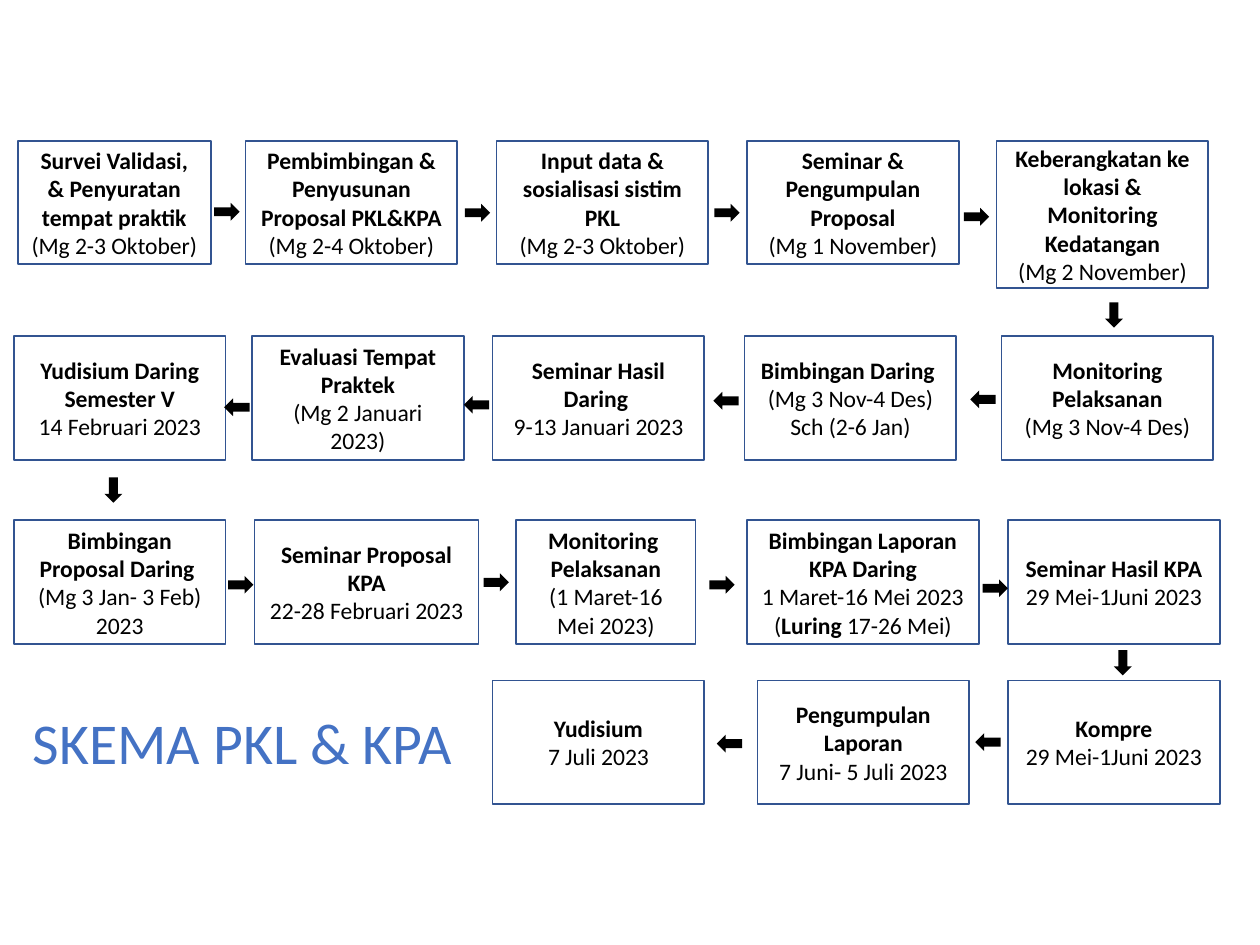
from dataclasses import dataclass
from enum import IntEnum

from pptx import Presentation
from pptx.dml.color import RGBColor
from pptx.enum.shapes import MSO_SHAPE
from pptx.enum.text import MSO_ANCHOR, MSO_AUTO_SIZE, PP_ALIGN
from pptx.shapes.autoshape import Shape
from pptx.shapes.shapetree import SlideShapes
from pptx.text.text import TextFrame
from pptx.util import Cm, Pt

BLACK = RGBColor(0x00, 0x00, 0x00)
BORDER_BLUE = RGBColor(0x32, 0x54, 0x91)
TITLE_BLUE = RGBColor(0x44, 0x72, 0xC4)

STEP_WIDTH, STEP_HEIGHT = 4.27, 2.49
ARROW_LENGTH, ARROW_THICKNESS = 0.51, 0.36
ROW_TOPS = (2.84, 6.78, 10.49, 13.72)


class Direction(IntEnum):
    RIGHT = 0
    DOWN = 90
    LEFT = 180


@dataclass(frozen=True)
class Step:
    left: float
    paragraphs: tuple[str, ...]
    width: float = STEP_WIDTH
    height: float = STEP_HEIGHT


@dataclass(frozen=True)
class Arrow:
    left: float
    top: float
    direction: Direction


STEP_ROWS = (
    (
        Step(0.36, ("*Survei Validasi, & Penyuratan tempat praktik*", "(Mg 2-3 Oktober)"), width=3.89),
        Step(4.95, ("*Pembimbingan & Penyusunan Proposal PKL&KPA*", "(Mg 2-4 Oktober)")),
        Step(10.01, ("*Input data & sosialisasi sistim PKL*", "(Mg 2-3 Oktober)")),
        Step(15.06, ("*Seminar & Pengumpulan Proposal*", "(Mg 1 November)")),
        Step(20.09, ("*Keberangkatan ke lokasi & Monitoring Kedatangan*", "(Mg 2 November)"), height=2.97),
    ),
    (
        Step(20.19, ("*Monitoring Pelaksanan*", "(Mg 3 Nov-4 Des)")),
        Step(15.01, ("*Bimbingan Daring *", "(Mg 3 Nov-4 Des)", "Sch (2-6 Jan)")),
        Step(9.93, ("*Seminar Hasil Daring *", "9-13 Januari 2023")),
        Step(5.08, ("*Evaluasi Tempat Praktek*", "(Mg 2 Januari 2023)")),
        Step(0.28, ("*Yudisium Daring Semester V*", "14 Februari 2023")),
    ),
    (
        Step(0.28, ("*Bimbingan Proposal Daring *", "(Mg 3 Jan- 3 Feb)", "2023")),
        Step(5.13, ("*Seminar Proposal KPA*", "22-28 Februari 2023"), width=4.52),
        Step(10.41, ("*Monitoring *", "*Pelaksanan*", "(1 Maret-16 Mei 2023)"), width=3.61),
        Step(15.06, ("*Bimbingan Laporan KPA Daring*", "1 Maret-16 Mei 2023", "(*Luring* 17-26 Mei)"), width=4.67),
        Step(20.32, ("*Seminar Hasil KPA *29 Mei-1Juni 2023",)),
    ),
    (
        Step(20.32, ("*Kompre*", "29 Mei-1Juni 2023")),
        Step(15.27, ("*Pengumpulan Laporan*", "7 Juni- 5 Juli 2023")),
        Step(9.93, ("*Yudisium*", "7 Juli 2023")),
    ),
)

ARROWS = (
    Arrow(4.32, 4.09, Direction.RIGHT),
    Arrow(9.37, 4.11, Direction.RIGHT),
    Arrow(14.4, 4.11, Direction.RIGHT),
    Arrow(19.43, 4.19, Direction.RIGHT),
    Arrow(22.2, 6.17, Direction.DOWN),
    Arrow(19.56, 7.87, Direction.LEFT),
    Arrow(14.38, 7.9, Direction.LEFT),
    Arrow(9.35, 7.98, Direction.LEFT),
    Arrow(4.52, 8.03, Direction.LEFT),
    Arrow(2.03, 9.7, Direction.DOWN),
    Arrow(4.6, 11.61, Direction.RIGHT),
    Arrow(9.75, 11.56, Direction.RIGHT),
    Arrow(14.3, 11.61, Direction.RIGHT),
    Arrow(19.81, 11.68, Direction.RIGHT),
    Arrow(22.38, 13.18, Direction.DOWN),
    Arrow(19.66, 14.78, Direction.LEFT),
    Arrow(14.45, 14.81, Direction.LEFT),
)


def write_text(frame: TextFrame, paragraphs: tuple[str, ...], *, size: float,
               color: RGBColor, wrap: bool = True) -> None:
    frame.word_wrap = wrap
    frame.vertical_anchor = MSO_ANCHOR.MIDDLE
    for index, marked_text in enumerate(paragraphs):
        paragraph = frame.add_paragraph() if index else frame.paragraphs[0]
        paragraph.alignment = PP_ALIGN.CENTER
        for position, piece in enumerate(marked_text.split("*")):
            if piece:
                run = paragraph.add_run()
                run.text = piece
                run.font.name = "Calibri"
                run.font.size = Pt(size)
                run.font.bold = position % 2 == 1
                run.font.color.rgb = color


def draw_step(shapes: SlideShapes, step: Step, top: float) -> None:
    box = shapes.add_shape(MSO_SHAPE.RECTANGLE, Cm(step.left), Cm(top),
                           Cm(step.width), Cm(step.height))
    box.shadow.inherit = False
    box.fill.background()
    box.line.color.rgb = BORDER_BLUE
    box.line.width = Pt(1)
    write_text(box.text_frame, step.paragraphs, size=13.5, color=BLACK)


def draw_arrow(shapes: SlideShapes, arrow: Arrow) -> None:
    pointer = shapes.add_shape(MSO_SHAPE.RIGHT_ARROW, Cm(arrow.left), Cm(arrow.top),
                               Cm(ARROW_LENGTH), Cm(ARROW_THICKNESS))
    pointer.rotation = arrow.direction
    pointer.shadow.inherit = False
    pointer.fill.solid()
    pointer.fill.fore_color.rgb = BLACK
    pointer.line.fill.background()


def place_title(title: Shape) -> None:
    title.left, title.top, title.width, title.height = Cm(0.43), Cm(14.15), Cm(8.92), Cm(1.6)
    frame = title.text_frame
    frame.margin_left = frame.margin_right = Cm(0.18)
    frame.margin_top = frame.margin_bottom = Cm(0.1)
    frame.auto_size = MSO_AUTO_SIZE.SHAPE_TO_FIT_TEXT
    write_text(frame, ("SKEMA PKL & KPA",), size=33, color=TITLE_BLUE, wrap=False)


def main() -> None:
    presentation = Presentation()
    presentation.slide_width, presentation.slide_height = Cm(25.4), Cm(19.05)
    slide = presentation.slides.add_slide(presentation.slide_layouts[5])
    place_title(slide.shapes.title)
    for top, steps in zip(ROW_TOPS, STEP_ROWS):
        for step in steps:
            draw_step(slide.shapes, step, top)
    for arrow in ARROWS:
        draw_arrow(slide.shapes, arrow)
    presentation.save("out.pptx")


if __name__ == "__main__":
    main()
